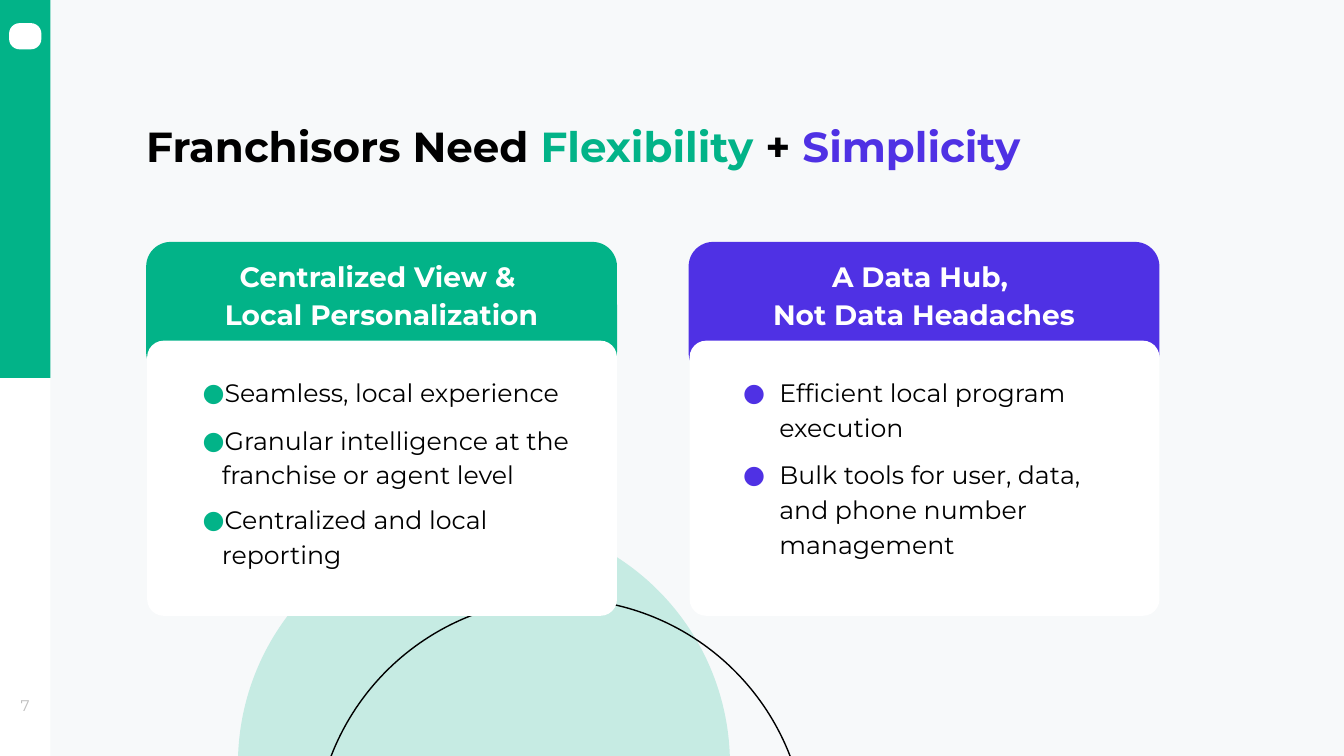
"""Builds the slide on what franchisors need: flexibility and simplicity."""
import pptx
import pptx.util
import pptx.dml.color
import pptx.enum.shapes
import pptx.enum.text
import pptx.oxml
import pptx.oxml.ns

Inches = pptx.util.Inches
Pt = pptx.util.Pt
RGBColor = pptx.dml.color.RGBColor
SHAPE = pptx.enum.shapes.MSO_SHAPE
ALIGN = pptx.enum.text.PP_ALIGN
ANCHOR = pptx.enum.text.MSO_ANCHOR

GREEN = RGBColor(0x02, 0xB3, 0x88)
PURPLE = RGBColor(0x4F, 0x31, 0xE4)
BLACK = RGBColor(0, 0, 0)
WHITE = RGBColor(0xFF, 0xFF, 0xFF)
GREY = RGBColor(0xBF, 0xBF, 0xBF)
PALE = RGBColor(0xF7, 0xF9, 0xFA)


def add_block(preset, box, fill=None, adjustments=()):
    block = slide.shapes.add_shape(preset, *map(Inches, box))
    block.shadow.inherit = False
    block.line.fill.background()
    if fill is None:
        block.fill.background()
    else:
        block.fill.solid()
        block.fill.fore_color.rgb = fill
    for index, value in enumerate(adjustments):
        block.adjustments[index] = value
    return block


def set_frame(holder, insets, anchor=ANCHOR.TOP):
    frame = holder.text_frame
    frame.word_wrap = True
    frame.auto_size = pptx.enum.text.MSO_AUTO_SIZE.NONE
    frame.vertical_anchor = anchor
    (frame.margin_left, frame.margin_top,
     frame.margin_right, frame.margin_bottom) = map(Inches, insets)
    return frame


deck = pptx.Presentation()
deck.slide_width = Inches(13.33)
deck.slide_height = Inches(7.5)
slide = deck.slides.add_slide(deck.slide_layouts[3])
slide.background.fill.solid()
slide.background.fill.fore_color.rgb = PALE
title, *lists = slide.placeholders

add_block(SHAPE.RECTANGLE, (0, 3.75, 0.5, 3.75), WHITE)
add_block(SHAPE.RECTANGLE, (0, 0, 0.5, 3.75), GREEN)
add_block(SHAPE.ROUNDED_RECTANGLE, (0.09, 0.23, 0.32, 0.26), WHITE, [0.4])

page_number = slide.shapes.add_textbox(*map(Inches, (0, 6.8, 0.5, 0.4)))
paragraph = set_frame(page_number, (0.1, 0.05, 0.1, 0.05), ANCHOR.MIDDLE).paragraphs[0]
paragraph.text = "7"
paragraph.alignment = ALIGN.CENTER
font = paragraph.runs[0].font
font.name, font.size, font.color.rgb = "Montserrat", Pt(11), GREY

disc = add_block(SHAPE.OVAL, (2.36, 5.14, 4.88, 4.88), GREEN)
disc_color = disc.element.spPr.find(".//" + pptx.oxml.ns.qn("a:srgbClr"))
disc_color.append(pptx.oxml.parse_xml(
    f'<a:alpha {pptx.oxml.ns.nsdecls("a")} val="20000"/>'))
ring = add_block(SHAPE.OVAL, (3.12, 5.94, 4.88, 4.88))
ring.line.color.rgb = BLACK
ring.line.width = Pt(1)

title.left, title.top, title.width, title.height = map(Inches, (1.45, 1.04, 10.8, 1.01))
paragraph = set_frame(title, (0, 0.21, 0, 0)).paragraphs[0]
paragraph.alignment = ALIGN.LEFT
paragraph.line_spacing = 0.9
for words, color in [("Franchisors Need ", BLACK), ("Flexibility", GREEN),
                     (" + ", BLACK), ("Simplicity", PURPLE)]:
    run = paragraph.add_run()
    run.text = words
    run.font.name, run.font.size, run.font.bold = "Montserrat", Pt(30), True
    run.font.color.rgb = color

cards = [
    (1.45, GREEN, "Centralized View & \vLocal Personalization",
     (1.91, 3.6, 3.92, 2.12), 0.19, 0.25,
     [("Seamless, local experience", 0, 0),
      ("Granular intelligence at the franchise or agent level", 9, 0),
      ("Centralized and local reporting", 7, 7)]),
    (6.83, PURPLE, "A Data Hub, \vNot Data Headaches",
     (7.13, 3.6, 4.05, 2.5), 0.5, 0.36,
     [("Efficient local program execution", 0, 0),
      ("Bulk tools for user, data, and phone number management", 9, 0)]),
]
for points, (left, color, heading, box, indent, hanging, items) in zip(lists, cards):
    header = add_block(SHAPE.ROUND_2_SAME_RECTANGLE, (left, 2.4, 4.67, 1.37),
                       color, [0.178, 0.204])
    paragraph = set_frame(header, (0.1, 0.05, 0.1, 0.1)).paragraphs[0]
    paragraph.text = heading
    paragraph.alignment = ALIGN.CENTER
    paragraph.line_spacing = 1.15
    paragraph.space_after = Pt(20)
    for run in paragraph.runs:
        run.font.name, run.font.size, run.font.bold = "Montserrat", Pt(20), True
        run.font.color.rgb = WHITE
    add_block(SHAPE.ROUNDED_RECTANGLE, (left + 0.01, 3.38, 4.66, 2.73), WHITE, [0.06])

    points.left, points.top, points.width, points.height = map(Inches, box)
    frame = set_frame(points, (0.1, 0.1, 0.1, 0.1))
    frame.text = "\n".join(item[0] for item in items)
    for paragraph, (_, before, after) in zip(frame.paragraphs, items):
        paragraph.line_spacing = 1.15
        paragraph.space_before = Pt(before)
        paragraph.space_after = Pt(after)
        properties = paragraph._p.get_or_add_pPr()
        properties.set("marL", str(Inches(indent)))
        properties.set("indent", str(-Inches(hanging)))
        for bullet in (f'buClr {pptx.oxml.ns.nsdecls("a")}><a:srgbClr val="{color}"/></a:buClr>',
                       f'buFont {pptx.oxml.ns.nsdecls("a")} typeface="Montserrat"/>',
                       f'buChar {pptx.oxml.ns.nsdecls("a")} char="●"/>'):
            properties.append(pptx.oxml.parse_xml("<a:" + bullet))
        font = paragraph.runs[0].font
        font.name, font.size, font.color.rgb = "Montserrat", Pt(18), BLACK
    slide.shapes.element.append(points.element)

deck.save("out.pptx")
